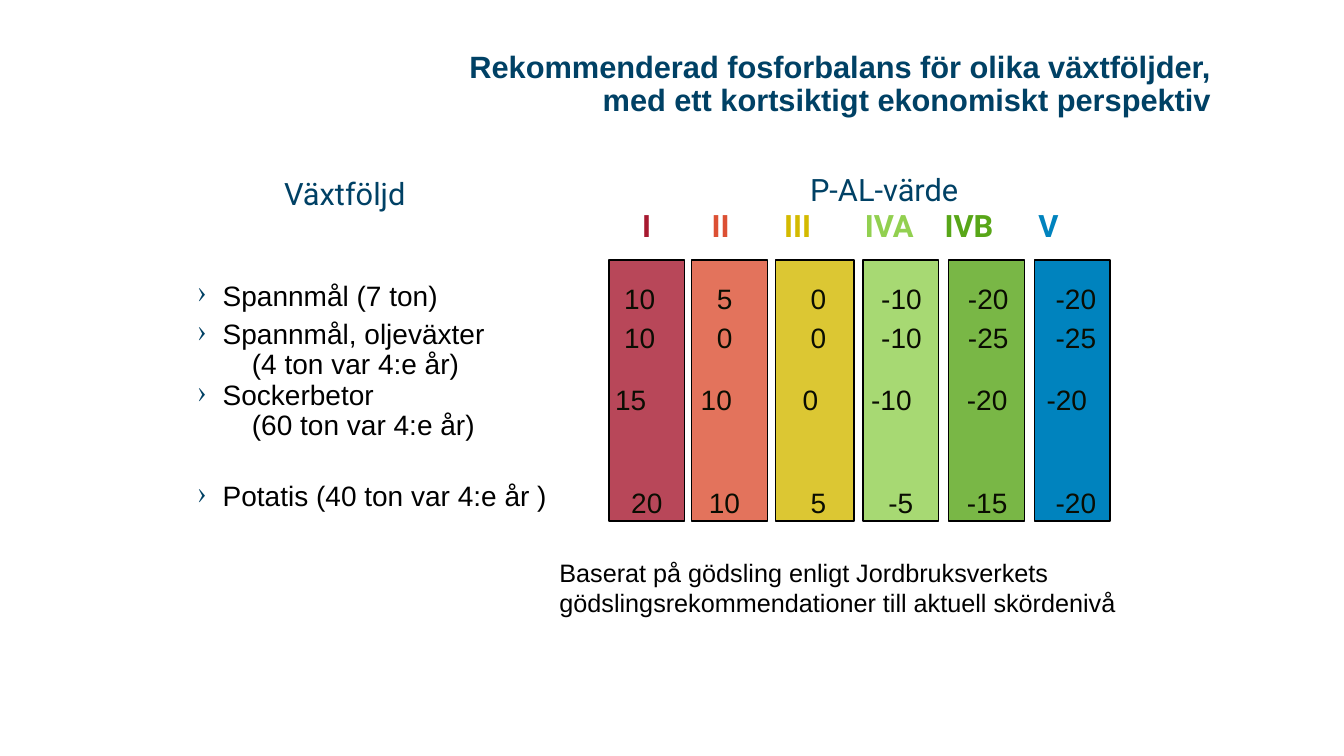
from lxml.etree import SubElement
from pptx import Presentation
from pptx.dml.color import RGBColor
from pptx.enum.shapes import MSO_SHAPE
from pptx.enum.text import MSO_ANCHOR, PP_ALIGN
from pptx.oxml.ns import qn
from pptx.util import Inches, Pt

COLORS = {
    "navy": "004165", "black": "000000", "value": "0A0D02", "white": "FFFFFF",
    "I": "A71930", "II": "DC5034", "III": "D4BA00",
    "IVA": "92D050", "IVB": "58A618", "V": "0083BE",
}


class BalanceSlide:
    def __init__(self, page):
        self.page = page

    def color(self, name):
        return RGBColor.from_string(COLORS[name])

    def style(self, para, size, color, font="Arial", bold=False):
        for span in para.runs:
            span.font.size = Pt(size)
            span.font.name = font
            span.font.bold = bold
            span.font.color.rgb = self.color(color)

    def indent(self, para, left, first=0):
        properties = para._p.get_or_add_pPr()
        properties.set("marL", str(Inches(left)))
        properties.set("indent", str(Inches(first)))
        return properties

    def bullet(self, para):
        properties = self.indent(para, 0.25, -0.25)
        bullet_color = SubElement(properties, qn("a:buClr"))
        SubElement(bullet_color, qn("a:srgbClr"), val=COLORS["navy"])
        SubElement(properties, qn("a:buChar"), char="›")

    def tabs(self, para, stops):
        tab_list = SubElement(para._p.get_or_add_pPr(), qn("a:tabLst"))
        for stop in stops:
            SubElement(tab_list, qn("a:tab"), pos=str(Inches(stop)), algn="l")

    def text_box(self, left, top, width, height, fill=None):
        box = self.page.shapes.add_textbox(
            Inches(left), Inches(top), Inches(width), Inches(height))
        box.text_frame.word_wrap = True
        if fill:
            box.fill.solid()
            box.fill.fore_color.rgb = self.color(fill)
        return box.text_frame

    def label(self, text, place, size, color="black", font="Arial", bold=False, fill=None):
        frame = self.text_box(*place, fill=fill)
        frame.text = text
        self.style(frame.paragraphs[0], size, color, font, bold)
        return frame

    def column(self, name, left, width, alpha, values):
        top = 2.58
        box = self.page.shapes.add_shape(
            MSO_SHAPE.RECTANGLE, Inches(left), Inches(top), Inches(width), Inches(2.59))
        box.shadow.inherit = False
        box.fill.solid()
        box.fill.fore_color.rgb = self.color(name)
        if alpha < 100:
            tint = box.fill._xPr.find(".//" + qn("a:srgbClr"))
            SubElement(tint, qn("a:alpha"), val=str(alpha * 1000))
        box.line.color.rgb = self.color("black")
        box.line.width = Pt(1)
        frame = box.text_frame
        frame.word_wrap = True
        frame.vertical_anchor = MSO_ANCHOR.TOP
        frame.margin_left = frame.margin_right = 0
        frame.margin_top = Inches(0.21)
        frame.text = "\n".join(text for text, _, _ in values)
        for para, (_, start, before) in zip(frame.paragraphs, values):
            para.alignment = PP_ALIGN.LEFT
            para.space_before = Pt(before)
            self.indent(para, round(start - left, 2))
            self.style(para, 20, "value")

    def crops(self, rows):
        frame = self.text_box(1.86, 2.48, 9.41, 3.61)
        frame.text = "\n".join(row[0] for row in rows)
        for para, (_, bulleted, spacing, before) in zip(frame.paragraphs, rows):
            if bulleted:
                self.bullet(para)
            else:
                self.indent(para, 0.54)
            para.line_spacing = spacing
            para.space_before = Pt(before)
            self.style(para, 20, "black")

    def class_header(self, names, stops):
        frame = self.label("P-AL-värde", (6.27, 1.64, 5, 0.84), 22,
                           "navy", "Roboto", fill="white")
        frame.paragraphs[0].alignment = PP_ALIGN.CENTER
        para = frame.add_paragraph()
        self.tabs(para, stops)
        for index, name in enumerate(names):
            span = para.add_run()
            span.text = name if index == 0 else "\t" + name
        self.style(para, 22, "navy", "Roboto", True)
        for span, name in zip(para.runs, names):
            span.font.color.rgb = self.color(name)


def main():
    deck = Presentation()
    deck.slide_width, deck.slide_height = Inches(13.33), Inches(7.5)
    slide = BalanceSlide(deck.slides.add_slide(deck.slide_layouts[6]))

    columns = [("I", 6.04, 0.75, 80), ("II", 6.86, 0.75, 80), ("III", 7.69, 0.78, 80),
               ("IVA", 8.56, 0.75, 80), ("IVB", 9.41, 0.75, 80), ("V", 10.26, 0.75, 100)]
    grain_starts = (6.19, 7.11, 8.04, 8.74, 9.6, 10.47)
    beet_starts = (6.1, 6.95, 7.96, 8.64, 9.59, 10.38)
    potato_starts = (6.26, 7.03, 8.04, 8.81, 9.59, 10.47)
    balances = [
        (("10", "5", "0", "-10", "-20", "-20"), grain_starts, 0),
        (("10", "0", "0", "-10", "-25", "-25"), grain_starts, 4),
        (("15", "10", "0", "-10", "-20", "-20"), beet_starts, 20.5),
        (("20", "10", "5", "-5", "-15", "-20"), potato_starts, 49.5),
    ]
    for index, column in enumerate(columns):
        values = [(texts[index], starts[index], before)
                  for texts, starts, before in balances]
        slide.column(*column, values)

    title = slide.label(
        "Rekommenderad fosforbalans för olika växtföljder,\v"
        "med ett kortsiktigt ekonomiskt perspektiv",
        (2.86, 0.47, 9.25, 0.75), 22, "navy", bold=True)
    title.vertical_anchor = MSO_ANCHOR.MIDDLE
    title.paragraphs[0].alignment = PP_ALIGN.RIGHT
    title.paragraphs[0].line_spacing = 0.9

    slide.class_header([column[0] for column in columns], (0.69, 1.41, 2.21, 3, 3.93))
    slide.crops([
        ("Spannmål (7 ton)", True, 1.7, 0),
        ("Spannmål, oljeväxter", True, 0.9, 6),
        ("(4 ton var 4:e år)", False, 0.9, 0),
        ("Sockerbetor", True, 0.9, 0),
        ("(60 ton var 4:e år)", False, 0.9, 0),
        ("Potatis (40 ton var 4:e år )", True, 1.7, 10),
    ])
    rotation = slide.label("Växtföljd", (2.49, 1.5, 3.5, 0.59), 22,
                           "navy", "Roboto", fill="white")
    rotation.paragraphs[0].line_spacing = 1.5
    slide.indent(rotation.paragraphs[0], 0.23)
    slide.label("Baserat på gödsling enligt Jordbruksverkets "
                "gödslingsrekommendationer till aktuell skördenivå",
                (5.45, 5.48, 5.83, 0.71), 18)
    deck.save("out.pptx")


if __name__ == "__main__":
    main()
